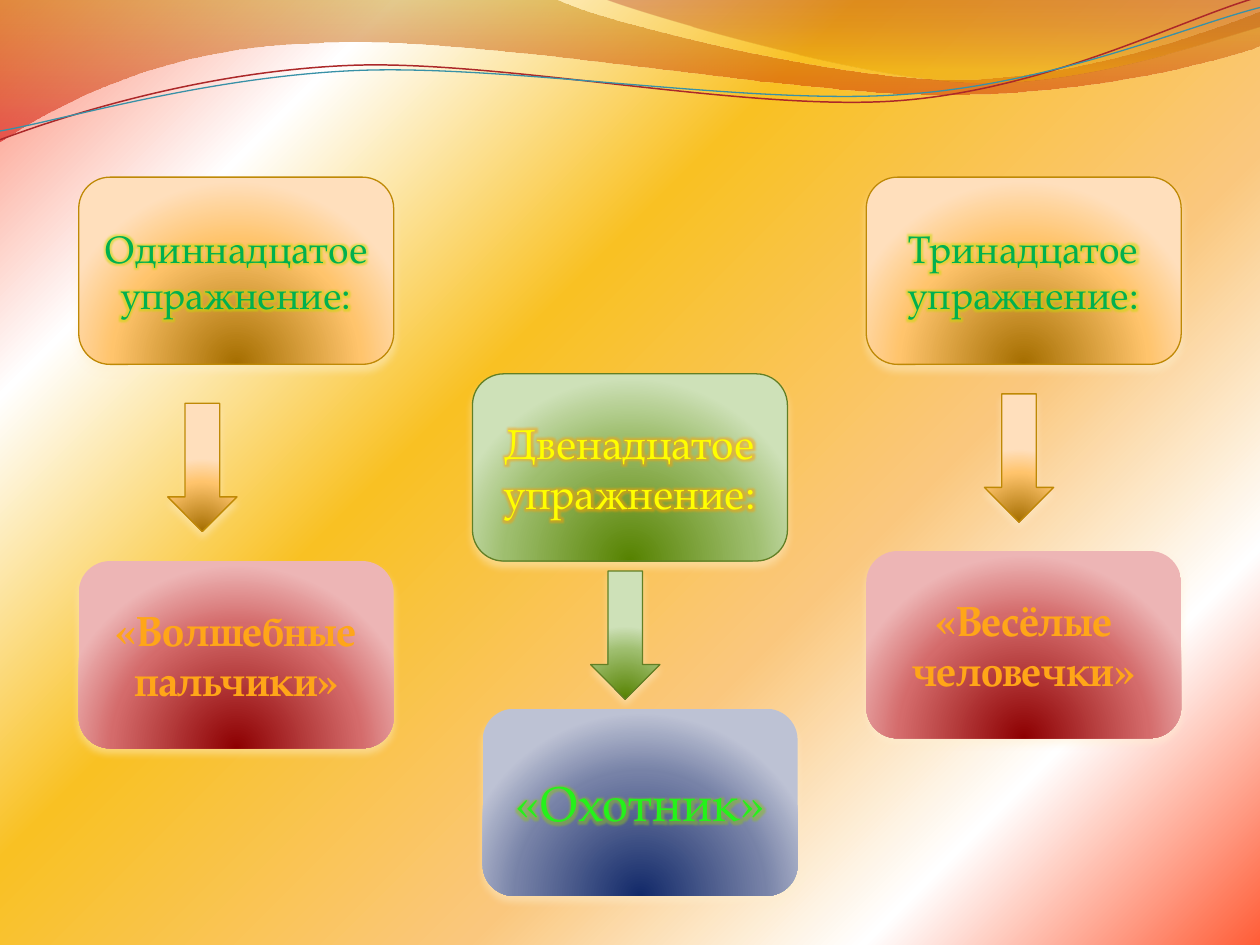
import dataclasses
import math

import lxml.etree
import pptx
import pptx.dml.color
import pptx.enum.shapes
import pptx.enum.text
import pptx.oxml
import pptx.oxml.ns
import pptx.util

WIDTH, HEIGHT = 10, 7.5
COL, ROW = WIDTH / 16, HEIGHT / 16
CARD = (4, 3.17)
ARROW = (0.88, 2.17)
TILT = -2.7
KIND = pptx.enum.shapes.MSO_SHAPE
NS = 'xmlns:a="http://schemas.openxmlformats.org/drawingml/2006/main"'
DOWN = '<a:lin ang="5400000" scaled="1"/>'
qn = pptx.oxml.ns.qn


@dataclasses.dataclass
class Look:
    """Gradient stops and outline (or None) of a shape."""
    stops: tuple
    line: str = None


@dataclasses.dataclass
class Ink:
    """Size, colour, glow (or None) and stops (or None) of a text."""
    size: int
    color: str
    glow: str = None
    stops: tuple = None
    bold: bool = False


class Theme:
    font = "TeX Gyre Pagella"
    back = ((0, "FF5D37"), (18, "FFFFFF"), (36, "FAC77D"),
            (61, "F9C123"), (82, "FFFFFF"), (100, "FB8871"))
    shadow = "FFF0D0"
    amber = Look(((0, "A56E00"), (68, "FFC46C"), (100, "FFDFBC")), "BF8905")
    green = Look(((0, "568200"), (68, "9EBE6E"), (100, "CEE1B8")), "627F24")
    red = Look(((0, "8D0001"), (68, "D46B6B"), (100, "EDB5B5")))
    blue = Look(((0, "122969"), (68, "7782A7"), (100, "BDC2D4")))
    leaf = Ink(22, "00B050", "C8DC00")
    sun = Ink(24, "FFFF00", "FFA000")
    gold = Ink(24, "FFA618", bold=True,
               stops=((0, "FFD196"), (75, "FFA618"), (100, "C38B00")))
    lime = Ink(28, "24F21A", "90C020")
    wide = ((0, "C38B00", 45), (100, "D60305", 55))
    crest = ((0, "A11112", 30), (80, "E9A600", 45))
    threads = (("AC2829", 0.85), ("3891A7", 0.75))


# Each path is a start, then lines (2 numbers) and Bezier curves (6 numbers).
WIDE = [(0, 0), (4.4, -0.01), (4.76, 0.17, 6.64, 0.63, 7.58, 0.63),
        (8.53, 0.63, 9.58, 0.26, 10, 0.09), (10.01, 0.36),
        (9.83, 0.44, 8.7, 0.76, 7.46, 0.75),
        (6.22, 0.75, 3.82, 0.28, 2.57, 0.34),
        (1.29, 0.36, 0.46, 0.83, -0.01, 1.13), (0, 0)]
CREST = [(4.79, -0.01), (5.09, 0.11, 6.82, 0.62, 7.69, 0.65),
         (8.56, 0.69, 9.61, 0.32, 10, 0.21), (10, 0), (4.79, -0.01)]
THREADS = [
    [(0, 1.11), (0.48, 0.93, 1.58, 0.57, 2.77, 0.52),
     (3.95, 0.47, 5.93, 0.89, 7.13, 0.8),
     (8.33, 0.71, 9.38, 0.15, 9.98, -0.02)],
    [(0, 1.04), (0.47, 0.96, 1.64, 0.61, 2.83, 0.56),
     (4.03, 0.51, 5.97, 0.84, 7.17, 0.75),
     (8.36, 0.67, 9.41, 0.21, 10, 0.06)]]


def rgb(code):
    return pptx.dml.color.RGBColor.from_string(code)


def tint(code, alpha=100):
    return (f'<a:srgbClr val="{code}"><a:alpha val="{alpha * 1000}"/>'
            '</a:srgbClr>')


def round_path(left, top, right, bottom):
    """Circular gradient whose focus is given in percent of the shape."""
    return (f'<a:path path="circle"><a:fillToRect l="{left * 1000}" '
            f't="{top * 1000}" r="{right * 1000}" b="{bottom * 1000}"/>'
            '</a:path>')


def shade(root, stops, course):
    """Swap the first solid fill under root for a gradient."""
    marks = "".join(f'<a:gs pos="{stop[0] * 1000}">{tint(*stop[1:])}</a:gs>'
                    for stop in stops)
    grad = pptx.oxml.parse_xml(f'<a:gradFill {NS} rotWithShape="1"><a:gsLst>'
                               f'{marks}</a:gsLst>{course}</a:gradFill>')
    solid = next(root.iter(qn("a:solidFill")))
    solid.getparent().replace(solid, grad)


def set_line(shape, color, width=0.75):
    if color:
        shape.line.color.rgb = rgb(color)
        shape.line.width = pptx.util.Pt(width)
    else:
        shape.line.fill.background()


def turn(point, angle):
    """Turn a point clockwise about the middle of the threads."""
    x, y = point[0] - WIDTH / 2, point[1] - 0.58
    sin, cos = math.sin(math.radians(angle)), math.cos(math.radians(angle))
    return x * cos - y * sin + WIDTH / 2, x * sin + y * cos + 0.58


def add_path(slide, steps, close, tilt=0):
    """Build the outline from all its points, then bend it into curves."""
    points = [turn(step[i:i + 2], -tilt)
              for step in steps for i in range(0, len(step), 2)]
    points = [tuple(pptx.util.Inches(n) for n in point) for point in points]
    pen = slide.shapes.build_freeform(*points[0])
    pen.add_line_segments(points[1:], close=close)
    shape = pen.convert_to_shape()
    lines = iter(list(shape._element.iter(qn("a:lnTo"))))
    for step in steps[1:]:
        first = next(lines)
        if len(step) == 6:
            first.tag = qn("a:cubicBezTo")
            for line in (next(lines), next(lines)):
                first.append(line[0])
                line.getparent().remove(line)
    shape.rotation = tilt
    shape.shadow.inherit = False
    return shape


def add_wave(slide, steps, stops):
    wave = add_path(slide, steps, True)
    wave.fill.solid()
    shade(wave._element.spPr, stops, DOWN)
    set_line(wave, None)


def add_thread(slide, steps, color, width):
    thread = add_path(slide, steps, False, TILT)
    thread.fill.background()
    set_line(thread, color, width)


def add_block(slide, kind, col, row, size, look):
    """Add a shaded shape; place and size are in columns and rows."""
    shape = slide.shapes.add_shape(
        kind, pptx.util.Inches(col * COL), pptx.util.Inches(row * ROW),
        pptx.util.Inches(size[0] * COL), pptx.util.Inches(size[1] * ROW))
    shape.fill.solid()
    shade(shape._element.spPr, look.stops, round_path(50, 130, 50, -30))
    set_line(shape, look.line)
    shape.shadow.inherit = False
    drop = lxml.etree.SubElement(
        shape._element.spPr.find(qn("a:effectLst")), qn("a:outerShdw"),
        blurRad=str(pptx.util.Pt(4.5)), dist=str(pptx.util.Pt(3)),
        dir="5400000", rotWithShape="0")
    color = lxml.etree.SubElement(drop, qn("a:srgbClr"), val=Theme.shadow)
    lxml.etree.SubElement(color, qn("a:alpha"), val="48000")
    return shape


def add_card(slide, col, row, look, text, ink):
    frame = add_block(slide, KIND.ROUNDED_RECTANGLE, col, row, CARD,
                      look).text_frame
    frame.word_wrap = True
    frame.vertical_anchor = pptx.enum.text.MSO_ANCHOR.MIDDLE
    para = frame.paragraphs[0]
    para.alignment = pptx.enum.text.PP_ALIGN.CENTER
    run = para.add_run()
    run.text = text
    font = para.font
    font.name, font.size = Theme.font, pptx.util.Pt(ink.size)
    font.bold = ink.bold
    font.color.rgb = rgb(ink.color)
    if ink.stops:
        shade(para._p, ink.stops, DOWN)
    if ink.glow:
        run._r.get_or_add_rPr().append(pptx.oxml.parse_xml(
            f'<a:effectLst {NS}><a:glow rad="{pptx.util.Pt(7)}">'
            f'{tint(ink.glow, 50)}</a:glow></a:effectLst>'))


def main():
    deck = pptx.Presentation()
    deck.slide_width = pptx.util.Inches(WIDTH)
    deck.slide_height = pptx.util.Inches(HEIGHT)
    slide = deck.slides.add_slide(deck.slide_layouts[6])
    slide.background.fill.solid()
    shade(slide._element, Theme.back, round_path(100, 100, 0, 0))
    add_wave(slide, WIDE, Theme.wide)
    add_wave(slide, CREST, Theme.crest)
    for steps, pen in zip(THREADS, Theme.threads):
        add_thread(slide, steps, *pen)
    for card in (
            (1, 3, Theme.amber, "Одиннадцатое упражнение:", Theme.leaf),
            (6, 6.33, Theme.green, "Двенадцатое упражнение:", Theme.sun),
            (11, 3, Theme.amber, "Тринадцатое упражнение:", Theme.leaf),
            (1, 9.5, Theme.red, "«Волшебные пальчики»", Theme.gold),
            (6.13, 12, Theme.blue, "«Охотник»", Theme.lime),
            (11, 9.33, Theme.red, "«Весёлые человечки»", Theme.gold)):
        add_card(slide, *card)
    for col, row, look in ((2.13, 6.83, Theme.amber),
                           (12.5, 6.67, Theme.amber),
                           (7.5, 9.67, Theme.green)):
        add_block(slide, KIND.DOWN_ARROW, col, row, ARROW, look)
    deck.save("out.pptx")


if __name__ == "__main__":
    main()
